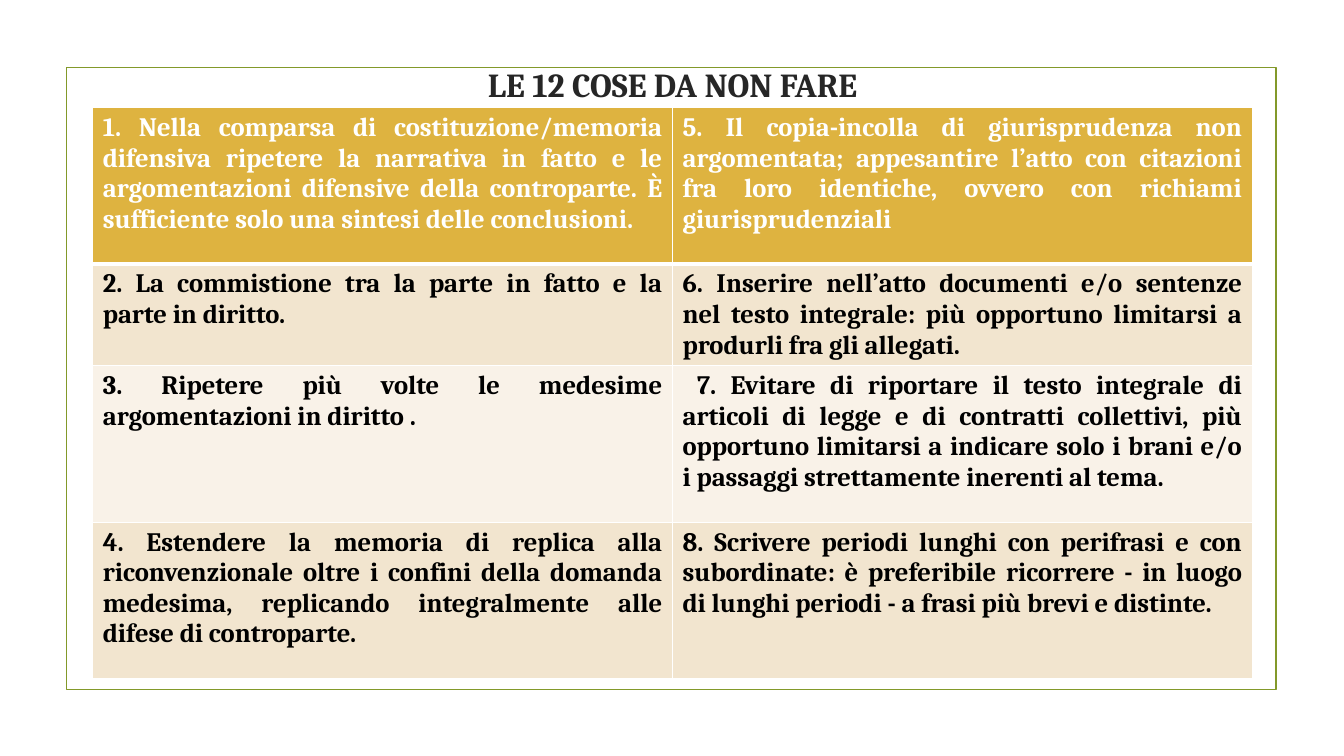
from dataclasses import dataclass

from lxml.etree import SubElement
from pptx import Presentation
from pptx.dml.color import RGBColor as Rgb
from pptx.enum.shapes import MSO_SHAPE as Shape
from pptx.enum.text import MSO_ANCHOR as Anchor, MSO_AUTO_SIZE as AutoSize, PP_ALIGN as Align
from pptx.oxml.ns import qn
from pptx.util import Pt

PX = 9144  # EMU per px, 100 px to the inch


@dataclass(frozen=True)
class Theme:
    font: str = "Cambria"
    title_size: int = 24
    cell_size: int = 19
    title_color: str = "262626"
    header_text: str = "FFFFFF"
    body_text: str = "000000"
    frame: str = "83992A"
    header_fill: str = "DEB340"
    band_fills: tuple = ("F2E5CF", "F9F2E8")
    border: str = "FFFFFF"
    frame_width: float = 1.25
    border_width: int = 1
    header_rule_width: int = 3


THEME = Theme()
TITLE = "LE 12 COSE DA NON FARE"
COLUMN_WIDTH = 575
ROW_HEIGHTS = (155, 101, 155, 155)
RULES = (
    ("1. Nella comparsa di costituzione/memoria difensiva ripetere la narrativa in fatto "
     "e le argomentazioni difensive della controparte. È sufficiente solo una sintesi "
     "delle conclusioni.",
     "5. Il copia-incolla di giurisprudenza non argomentata; appesantire l’atto con "
     "citazioni fra loro identiche, ovvero con richiami giurisprudenziali"),
    ("2. La commistione tra la parte in fatto e la parte in diritto.",
     "6. Inserire nell’atto documenti e/o sentenze nel testo integrale: più opportuno "
     "limitarsi a produrli fra gli allegati."),
    ("3. Ripetere più volte le medesime argomentazioni in diritto .",
     " 7. Evitare di riportare il testo integrale di articoli di legge e di contratti "
     "collettivi, più opportuno limitarsi a indicare solo i brani e/o i passaggi "
     "strettamente inerenti al tema."),
    ("4. Estendere la memoria di replica alla riconvenzionale oltre i confini della "
     "domanda medesima, replicando integralmente alle difese di controparte.",
     "8. Scrivere periodi lunghi con perifrasi e con subordinate: è preferibile ricorrere "
     "- in luogo di lunghi periodi - a frasi più brevi e distinte."),
)


def box(*lengths):
    return [length * PX for length in lengths]


def set_attributes(target, values):
    for name, value in values.items():
        setattr(target, name, value)


def write_text(text_frame, text, size, color, alignment):
    paragraph = text_frame.paragraphs[0]
    paragraph.alignment = alignment
    run = paragraph.add_run()
    run.text = text
    set_attributes(run.font, {"name": THEME.font, "size": Pt(size), "bold": True})
    run.font.color.rgb = Rgb.from_string(color)


def add_frame(slide, *bounds):
    frame = slide.shapes.add_shape(Shape.RECTANGLE, *box(*bounds))
    frame.shadow.inherit = False
    frame.fill.background()
    frame.line.color.rgb = Rgb.from_string(THEME.frame)
    frame.line.width = Pt(THEME.frame_width)


def format_title(slide, *bounds):
    title = slide.shapes.title
    set_attributes(title, dict(zip(("left", "top", "width", "height"), box(*bounds))))
    set_attributes(title.text_frame, {"word_wrap": True, "auto_size": AutoSize.NONE,
                                      "vertical_anchor": Anchor.MIDDLE})
    write_text(title.text_frame, TITLE, THEME.title_size, THEME.title_color, Align.CENTER)


def set_borders(cell, row_index):
    top = THEME.header_rule_width if row_index == 1 else THEME.border_width
    bottom = THEME.header_rule_width if row_index == 0 else THEME.border_width
    widths = {"a:lnL": THEME.border_width, "a:lnR": THEME.border_width,
              "a:lnT": top, "a:lnB": bottom}
    properties = cell._tc.get_or_add_tcPr()
    for tag, width in widths.items():
        line = SubElement(properties, qn(tag), w=str(Pt(width)))
        fill = SubElement(line, qn("a:solidFill"))
        SubElement(fill, qn("a:srgbClr"), val=THEME.border)


def add_rules_table(slide, left, top):
    bounds = box(left, top, 2 * COLUMN_WIDTH, sum(ROW_HEIGHTS))
    table = slide.shapes.add_table(len(RULES), 2, *bounds).table
    for column in table.columns:
        column.width = COLUMN_WIDTH * PX
    for row_index, (texts, height) in enumerate(zip(RULES, ROW_HEIGHTS)):
        table.rows[row_index].height = height * PX
        if row_index == 0:
            fill, color = THEME.header_fill, THEME.header_text
        else:
            fill, color = THEME.band_fills[(row_index - 1) % 2], THEME.body_text
        for column_index, text in enumerate(texts):
            cell = table.cell(row_index, column_index)
            set_borders(cell, row_index)
            cell.fill.solid()
            cell.fill.fore_color.rgb = Rgb.from_string(fill)
            write_text(cell.text_frame, text, THEME.cell_size, color, Align.JUSTIFY)


def main():
    presentation = Presentation()
    set_attributes(presentation, {"slide_width": 1333 * PX, "slide_height": 750 * PX})
    # Title-only layout
    slide = presentation.slides.add_slide(presentation.slide_layouts[5])
    # Green frame, heading and the table of rules
    add_frame(slide, 66, 67, 1200, 617)
    format_title(slide, 92, 81, 1150, 5)
    add_rules_table(slide, 92, 107)
    presentation.save("out.pptx")


if __name__ == "__main__":
    main()
